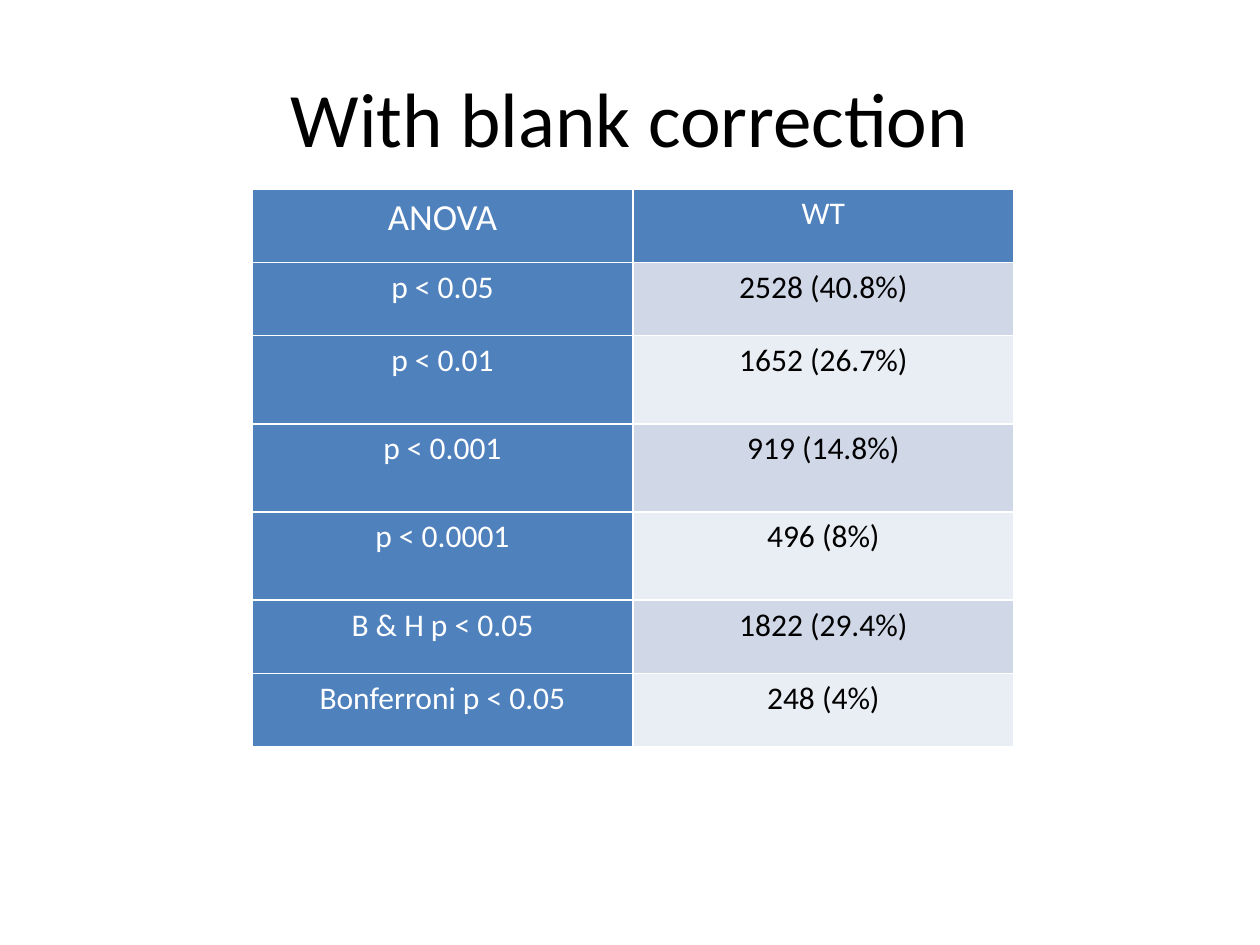
from dataclasses import dataclass

from lxml import etree
from pptx import Presentation
from pptx.dml.color import RGBColor
from pptx.enum import text
from pptx.oxml import ns
from pptx.util import Pt


@dataclass(frozen=True)
class Theme:
    font: str = "Calibri"
    ink: str = "000000"
    paper: str = "FFFFFF"
    heading: str = "4F81BD"
    bands: tuple = ("D0D8E8", "E9EDF4")
    title_size: float = 44
    corner_size: float = 21
    body_size: float = 18
    border: float = 1


THEME = Theme()
ANOVA_ROWS = [
    ("ANOVA", "WT", 41.9),
    ("p < 0.05", "2528 (40.8%)", 41.9),
    ("p < 0.01", "1652 (26.7%)", 50.4),
    ("p < 0.001", "919 (14.8%)", 50.4),
    ("p < 0.0001", "496 (8%)", 50.4),
    ("B & H p < 0.05", "1822 (29.4%)", 41.9),
    ("Bonferroni p < 0.05", "248 (4%)", 41.9),
]


def style_paragraph(paragraph, size, color):
    paragraph.alignment = text.PP_ALIGN.CENTER
    paragraph.font.name = THEME.font
    paragraph.font.size = Pt(size)
    paragraph.font.bold = False
    paragraph.font.color.rgb = RGBColor.from_string(color)


def add_title(slide, wording, left, top, width, height):
    title = slide.shapes.add_textbox(Pt(left), Pt(top), Pt(width), Pt(height))
    frame = title.text_frame
    frame.word_wrap = True
    frame.vertical_anchor = text.MSO_ANCHOR.MIDDLE
    frame.text = wording
    style_paragraph(frame.paragraphs[0], THEME.title_size, THEME.ink)


def set_borders(cell):
    properties = cell._tc.get_or_add_tcPr()
    for position, side in enumerate(("lnL", "lnR", "lnT", "lnB")):
        line = etree.Element(ns.qn(f"a:{side}"), w=str(Pt(THEME.border)))
        fill = etree.SubElement(line, ns.qn("a:solidFill"))
        etree.SubElement(fill, ns.qn("a:srgbClr"), val=THEME.paper)
        properties.insert(position, line)


def fill_cell(cell, wording, size, color, background):
    cell.margin_left = cell.margin_right = Pt(5)
    cell.margin_top = cell.margin_bottom = Pt(0)
    cell.fill.solid()
    cell.fill.fore_color.rgb = RGBColor.from_string(background)
    set_borders(cell)
    cell.text = wording
    paragraph = cell.text_frame.paragraphs[0]
    paragraph.line_spacing = 1.15
    style_paragraph(paragraph, size, color)


def add_anova_table(slide, rows, left, top, width):
    height = sum(row_height for *_, row_height in rows)
    table = slide.shapes.add_table(
        len(rows), 2, Pt(left), Pt(top), Pt(width), Pt(height)
    ).table
    for column in table.columns:
        column.width = Pt(width / 2)
    for index, (threshold, count, row_height) in enumerate(rows):
        table.rows[index].height = Pt(row_height)
        is_header = index == 0
        threshold_size = THEME.corner_size if is_header else THEME.body_size
        count_color = THEME.paper if is_header else THEME.ink
        count_fill = THEME.heading if is_header else THEME.bands[(index - 1) % 2]
        fill_cell(table.cell(index, 0), threshold, threshold_size,
                  THEME.paper, THEME.heading)
        fill_cell(table.cell(index, 1), count, THEME.body_size,
                  count_color, count_fill)


def main():
    deck = Presentation()
    deck.slide_width, deck.slide_height = Pt(720), Pt(540)
    slide = deck.slides.add_slide(deck.slide_layouts[6])
    add_anova_table(slide, ANOVA_ROWS, 144, 108, 435.4)
    add_title(slide, "With blank correction", 36, 21.6, 648, 90)
    deck.save("out.pptx")


if __name__ == "__main__":
    main()
